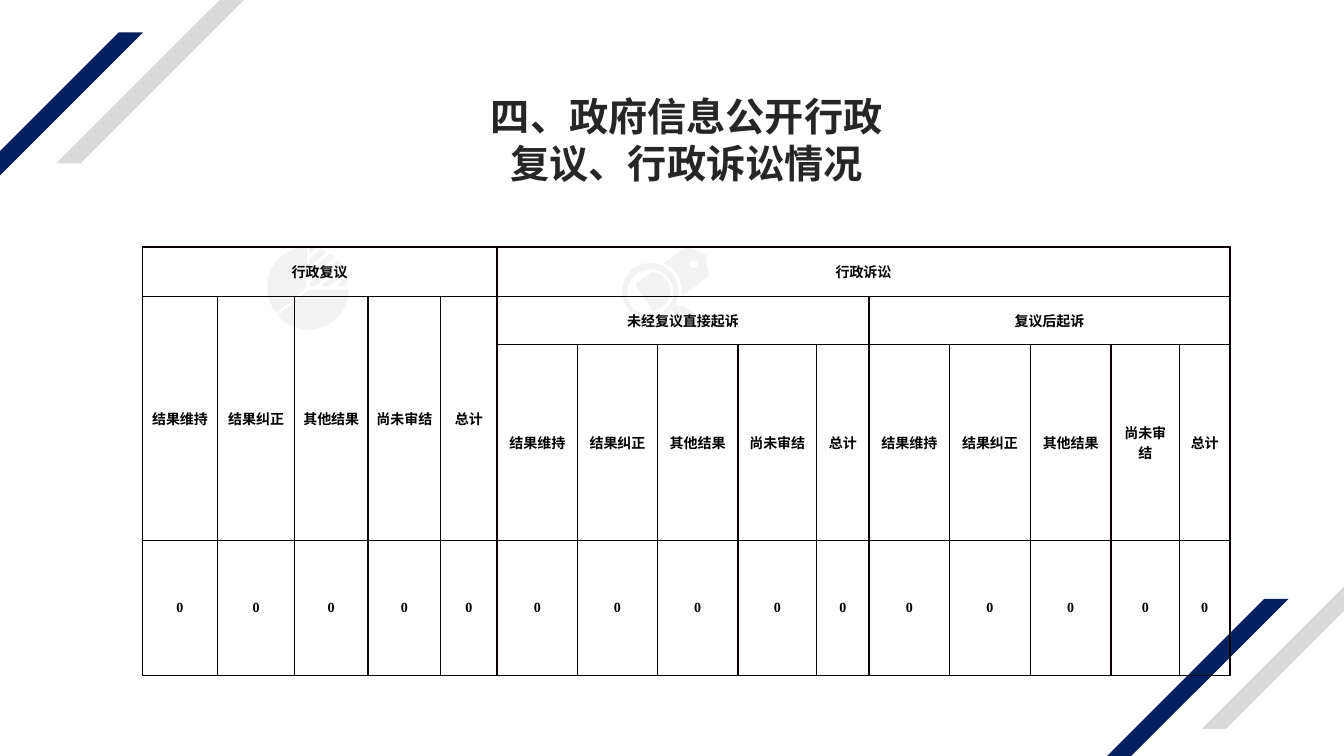
from math import cos, radians, sin

from lxml.etree import SubElement
from pptx import Presentation
from pptx.dml.color import RGBColor
from pptx.enum.shapes import MSO_SHAPE
from pptx.enum.text import MSO_ANCHOR, PP_ALIGN
from pptx.oxml.ns import qn
from pptx.util import Inches, Pt

# Content
TITLE = "四、政府信息公开行政复议、行政诉讼情况"
RESULTS = ["结果维持", "结果纠正", "其他结果", "尚未审结", "总计"]
COUNTS = ["0"] * 15
# row, column, rows spanned, columns spanned, text
GROUP_HEADS = [
    (0, 0, 1, 5, "行政复议"),
    (0, 5, 1, 10, "行政诉讼"),
    (1, 5, 1, 5, "未经复议直接起诉"),
    (1, 10, 1, 5, "复议后起诉"),
]
COLUMN_WIDTHS = [0.75, 0.76, 0.73, 0.72, 0.56, 0.8, 0.79, 0.8, 0.78, 0.52,
                 0.8, 0.8, 0.8, 0.68, 0.5]
ROW_HEIGHTS = [0.49, 0.48, 1.94, 1.34]

NAVY, GREY, PALE, INK, BLACK = "002060", "D9D9D9", "F2F2F2", "262626", "000000"
STRIPES = [(-1.41, 0.32, NAVY), (0.56, -0.97, GREY),
           (9.95, 5.94, NAVY), (11.92, 4.64, GREY)]


def color(value):
    return RGBColor.from_string(value)


def arc(cx, cy, radius, start, end, steps=32):
    """Points on a circle, angles in degrees clockwise from the right."""
    angles = [radians(start + (end - start) * i / steps) for i in range(steps + 1)]
    return [(cx + radius * cos(a), cy + radius * sin(a)) for a in angles]


# Icon outlines: each shape is a list of contours
PIE_ICON = [
    [[(3.19, 2.84), (3.27, 2.84), (3.43, 2.7), (3.41, 2.65), (3.19, 2.83)]],
    [[(3.07, 2.45), (3.07, 2.52), (3.14, 2.46)]],
    [[(3.41, 2.84), (3.45, 2.8), (3.44, 2.74), (3.33, 2.84)]],
    [[(3.28, 2.52), (3.07, 2.69), (3.07, 2.76), (3.32, 2.55)]],
    [[(3.18, 2.47), (3.07, 2.57), (3.07, 2.64), (3.24, 2.5)]],
    [[(3.38, 2.62), (3.35, 2.58), (3.07, 2.81), (3.07, 2.84), (3.13, 2.84)]],
    [[(3.04, 2.85)] + arc(3.05, 2.85, 0.4, 270, 140)],
    [[(3.06, 2.88)] + arc(3.06, 2.87, 0.4, 140, 0)],
]
TAG_ICON = [
    [[(7, 2.55), (7, 2.53), (6.82, 2.45), (6.8, 2.46), (6.58, 2.61), (6.67, 2.66),
      (6.73, 2.74), (6.76, 2.84), (6.76, 2.94), (7.02, 2.75), (7.03, 2.73)],
     arc(6.88, 2.62, 0.04, 0, 360)],
    [[(6.48, 3.09), (6.31, 2.84), (6.31, 2.81)] + arc(6.46, 2.89, 0.19, -90, 80)],
    [[(6.95, 3.15), (6.78, 3.04), (6.72, 3.04)] + arc(6.45, 2.89, 0.28, 28, -319)
     + [(6.69, 3.09), (6.72, 3.15), (6.88, 3.25), (6.93, 3.26), (6.97, 3.21)],
     arc(6.45, 2.9, 0.23, 0, 360)],
]

presentation = Presentation()
presentation.slide_width, presentation.slide_height = Inches(13.33), Inches(7.5)
slide = presentation.slides.add_slide(presentation.slide_layouts[6])


def paint(shape, fill):
    shape.shadow.inherit = False
    shape.fill.solid()
    shape.fill.fore_color.rgb = color(fill)
    shape.line.fill.background()


def style(paragraph, font_name, size, ink):
    paragraph.alignment = PP_ALIGN.CENTER
    font = paragraph.font
    font.name, font.size, font.bold = font_name, Pt(size), True
    font.color.rgb = color(ink)


def draw_icon(icon):
    for contours in icon:
        builder = None
        for contour in contours:
            start, *rest = [(Inches(x), Inches(y)) for x, y in contour]
            if builder is None:
                builder = slide.shapes.build_freeform(*start)
            else:
                builder.move_to(*start)
            builder.add_line_segments(rest, close=True)
        paint(builder.convert_to_shape(), PALE)


def add_borders(cell):
    properties = cell._tc.get_or_add_tcPr()
    for index, side in enumerate(("a:lnL", "a:lnR", "a:lnT", "a:lnB")):
        line = properties.makeelement(qn(side), {"w": str(Pt(1))})
        properties.insert(index, line)
        SubElement(SubElement(line, qn("a:solidFill")), qn("a:srgbClr"), val="080000")


# Corner stripes
for left, top, fill in STRIPES:
    stripe = slide.shapes.add_shape(MSO_SHAPE.PARALLELOGRAM, Inches(left), Inches(top),
                                    Inches(2.83), Inches(2.59))
    stripe.adjustments[0] = 1.0
    paint(stripe, fill)

# Pale icons behind the table
draw_icon(PIE_ICON)
draw_icon(TAG_ICON)

# Title
title = slide.shapes.add_textbox(Inches(4.6), Inches(0.87), Inches(4.42), Inches(1.04))
title.text_frame.word_wrap = True
title.text_frame.text = TITLE
style(title.text_frame.paragraphs[0], "Noto Sans CJK SC", 28, INK)

# Table
table = slide.shapes.add_table(len(ROW_HEIGHTS), len(COLUMN_WIDTHS), Inches(1.41), Inches(2.45),
                               Inches(sum(COLUMN_WIDTHS)), Inches(sum(ROW_HEIGHTS))).table
table.first_row = table.horz_banding = False
for column, width in zip(table.columns, COLUMN_WIDTHS):
    column.width = Inches(width)
for row, height in zip(table.rows, ROW_HEIGHTS):
    row.height = Inches(height)

entries = GROUP_HEADS + [(3, c, 1, 1, count) for c, count in enumerate(COUNTS)]
for c, result in enumerate(RESULTS * 3):
    review = c < len(RESULTS)
    entries.append((1 if review else 2, c, 2 if review else 1, 1, result))

for r, c, row_span, column_span, text in entries:
    cell = table.cell(r, c)
    if row_span * column_span > 1:
        cell.merge(table.cell(r + row_span - 1, c + column_span - 1))
    cell.text = text

for cell in table.iter_cells():
    cell.fill.background()
    cell.vertical_anchor = MSO_ANCHOR.MIDDLE
    cell.margin_left = cell.margin_right = Inches(0.07)
    cell.margin_top = cell.margin_bottom = 0
    style(cell.text_frame.paragraphs[0], "Times New Roman", 10, BLACK)
    add_borders(cell)

presentation.save("out.pptx")
